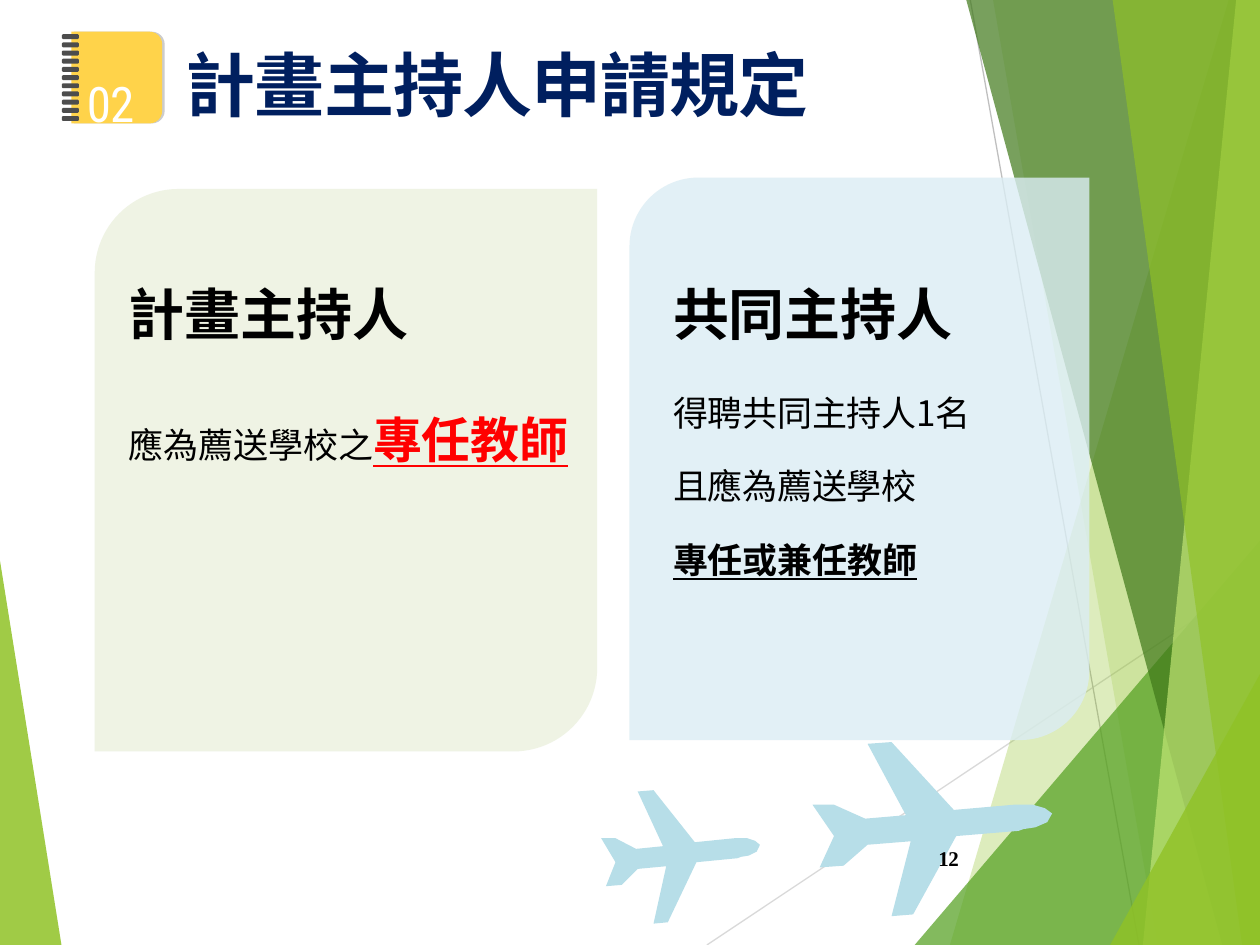
from pptx import Presentation
from pptx.dml.color import RGBColor
from pptx.enum.shapes import MSO_CONNECTOR, MSO_SHAPE
from pptx.enum.text import MSO_ANCHOR, PP_ALIGN
from pptx.oxml.ns import qn
from pptx.oxml.xmlchemy import OxmlElement
from pptx.util import Cm, Pt

WIDTH, HEIGHT = 25.4, 19.05
LIME, SKY, BLACK, RED = "90C226", "B7DEE8", "000000", "FF0000"
TOP_RIGHT, BOTTOM_RIGHT = (WIDTH, 0), (WIDTH, HEIGHT)

# Plane outline in percent of its width and height
PLANE = [(33, 0), (23, 1), (39, 42), (22, 44), (9, 36), (0, 36), (9, 54),
         (3, 72), (13, 71), (23, 59), (41, 57), (33, 100), (42, 99), (60, 54),
         (86, 51), (88, 50), (93, 49), (98, 46), (100, 41), (97, 38),
         (92, 36), (86, 36), (84, 36), (59, 39)]


def color(value):
    return RGBColor.from_string(value)


class SlideWriter:
    """Draws on one slide in one style; lengths are in centimetres."""

    font = "Noto Sans CJK JP"

    def __init__(self, slide):
        self.slide = slide

    def paint(self, shape, fill, opacity):
        shape.shadow.inherit = False
        shape.fill.solid()
        shape.fill.fore_color.rgb = color(fill)
        if opacity < 100:
            alpha = OxmlElement("a:alpha")
            alpha.set("val", str(opacity * 1000))
            shape.element.spPr.find(".//" + qn("a:srgbClr")).append(alpha)
        shape.line.fill.background()

    def polygon(self, contours, fill, opacity=100):
        """Draw one outline made of one or more closed contours."""
        builder = None
        for contour in contours:
            start, *rest = [(Cm(x), Cm(y)) for x, y in contour]
            if builder is None:
                builder = self.slide.shapes.build_freeform(*start)
            else:
                builder.move_to(*start)
            builder.add_line_segments(rest, close=True)
        self.paint(builder.convert_to_shape(), fill, opacity)

    def preset(self, kind, box, fill, opacity=100, corner=0.16667, rotation=0):
        shape = self.slide.shapes.add_shape(kind, *map(Cm, box))
        shape.adjustments[0] = corner
        shape.rotation = rotation
        self.paint(shape, fill, opacity)

    def plane(self, left, top, width, height):
        self.polygon([[(left + x * width / 100, top + y * height / 100)
                       for x, y in PLANE]], SKY)

    def line(self, start, end, stroke):
        connector = self.slide.shapes.add_connector(
            MSO_CONNECTOR.STRAIGHT, *map(Cm, start + end))
        connector.line.color.rgb = color(stroke)
        connector.line.width = Pt(0.75)
        connector.element.spPr.append(OxmlElement("a:effectLst"))

    def text_box(self, box, anchor=MSO_ANCHOR.TOP, top_inset=0.03):
        frame = self.slide.shapes.add_textbox(*map(Cm, box)).text_frame
        frame.word_wrap = True
        frame.vertical_anchor = anchor
        frame.margin_left = frame.margin_right = frame.margin_bottom = 0
        frame.margin_top = Cm(top_inset)
        return frame

    def paragraph(self, frame, before=0, indent=0.03):
        first = frame.paragraphs[0]
        paragraph = frame.add_paragraph() if first.runs else first
        paragraph.space_before = Pt(before)
        properties = paragraph._p.get_or_add_pPr()
        properties.set("marL", str(Cm(indent)))
        properties.set("indent", "0")
        return paragraph

    def run(self, paragraph, text, size, ink=BLACK, bold=False,
            underline=False, spacing=0, font=None):
        run = paragraph.add_run()
        run.text = text
        style = run.font
        style.name = font or self.font
        style.size = Pt(size)
        style.bold = bold
        style.underline = underline
        style.color.rgb = color(ink)
        properties = run._r.get_or_add_rPr()
        properties.set("spc", str(round(spacing * 100)))
        east_asian = OxmlElement("a:ea")
        east_asian.set("typeface", style.name)
        properties.find(qn("a:latin")).addnext(east_asian)


def draw_backdrop(writer):
    writer.polygon([[(0, 11.3), (1.24, HEIGHT), (0, HEIGHT)]], LIME, 85)
    writer.line((14.25, HEIGHT), (WIDTH, 11.61), "D9D9D9")
    writer.line((19.56, 0), (22.96, HEIGHT), "BFBFBF")
    # Upper and lower end of the left edge; the rest follows the slide border
    facets = [
        ((24.77, 0), (19.15, HEIGHT), LIME, 30),
        ((20.02, 0), (23.34, HEIGHT), LIME, 20),
        ((WIDTH, 10.9), (18.44, HEIGHT), "54A021", 72),
        ((19.48, 0), (24.64, HEIGHT), "3F7819", 70),
        ((24.92, 0), (23.04, HEIGHT), "C0E474", 70),
        ((22.43, 0), (25.04, HEIGHT), LIME, 65),
        ((WIDTH, 13.59), (22.38, HEIGHT), LIME, 80),
    ]
    for upper, lower, fill, opacity in facets:
        corners = [upper, lower, BOTTOM_RIGHT]
        if upper[1] == 0:
            corners.append(TOP_RIGHT)
        writer.polygon([corners], fill, opacity)


def draw_notebook(writer):
    for left, fill in ((1.48, "CCCCCC"), (1.43, "FFD34A")):
        writer.preset(MSO_SHAPE.ROUND_2_SAME_RECTANGLE,
                      (left, 0.65, 1.85, 1.83), fill, corner=0.14, rotation=90)
    left, right, height, pitch, cut = 1.25, 1.59, 0.1, 0.165, 0.02
    rings = []
    for index in range(11):
        top = 0.69 + index * pitch
        bottom = top + height
        rings.append([(left + cut, top), (right - cut, top),
                      (right, top + cut), (right, bottom - cut),
                      (right - cut, bottom), (left + cut, bottom),
                      (left, bottom - cut), (left, top + cut)])
    writer.polygon(rings, "4D4D4D")


def draw_title(writer):
    number = writer.paragraph(writer.text_box((1.65, 1.48, 1.6, 1.2), top_inset=0),
                              indent=0.1)
    writer.run(number, "02", 28, "FFFFFF", spacing=-0.4, font="Roboto Condensed")
    title = writer.paragraph(writer.text_box((3.75, 0.81, 13.5, 1.75)), 0.9, 0)
    writer.run(title, "計畫主持人申請規定", 40, "001F5F", bold=True, spacing=-0.5)


def draw_page_number(writer):
    frame = writer.text_box((17.91, 16.79, 1.42, 1.02), MSO_ANCHOR.MIDDLE, 0)
    page = writer.paragraph(frame, indent=0.1)
    page.alignment = PP_ALIGN.RIGHT
    page.line_spacing = Pt(14.1)
    writer.run(page, "12", 12, bold=True, spacing=-0.2, font="Times New Roman")


def draw_card_text(writer, box, heading):
    frame = writer.text_box(box)
    writer.run(writer.paragraph(frame, 1.1), heading, 32, bold=True, spacing=-0.1)
    return frame


def main():
    deck = Presentation()
    deck.slide_width, deck.slide_height = Cm(WIDTH), Cm(HEIGHT)
    writer = SlideWriter(deck.slides.add_slide(deck.slide_layouts[6]))

    draw_backdrop(writer)
    writer.plane(16.38, 14.96, 4.83, 3.51)
    writer.preset(MSO_SHAPE.ROUND_2_DIAG_RECTANGLE, (12.69, 3.58, 9.27, 11.34),
                  "DBEDF4", 80, corner=0.15)
    writer.plane(12.12, 15.93, 3.2, 2.69)
    draw_notebook(writer)
    draw_title(writer)
    draw_page_number(writer)
    writer.preset(MSO_SHAPE.ROUND_2_DIAG_RECTANGLE, (1.91, 3.81, 10.13, 11.34),
                  "EBF0DE", 80)

    host = draw_card_text(writer, (2.57, 5.61, 8.97, 3.89), "計畫主持人")
    rule = writer.paragraph(host, 35.8)
    writer.run(rule, "應為薦送學校之", 20, spacing=-0.1)
    for word, spacing in (("專任", -0.5), ("教", -0.3), ("師", -0.5)):
        writer.run(rule, word, 28, RED, True, True, spacing)

    co_host = draw_card_text(writer, (13.54, 5.61, 7.42, 6.15), "共同主持人")
    for before, text, strong, spacing in (
            (25.4, "得聘共同主持人1名", False, -0.2),
            (18, "且應為薦送學校", False, -0.2),
            (18.1, "專任或兼任教師", True, -0.1)):
        writer.run(writer.paragraph(co_host, before), text, 20,
                   bold=strong, underline=strong, spacing=spacing)

    deck.save("out.pptx")


if __name__ == "__main__":
    main()
